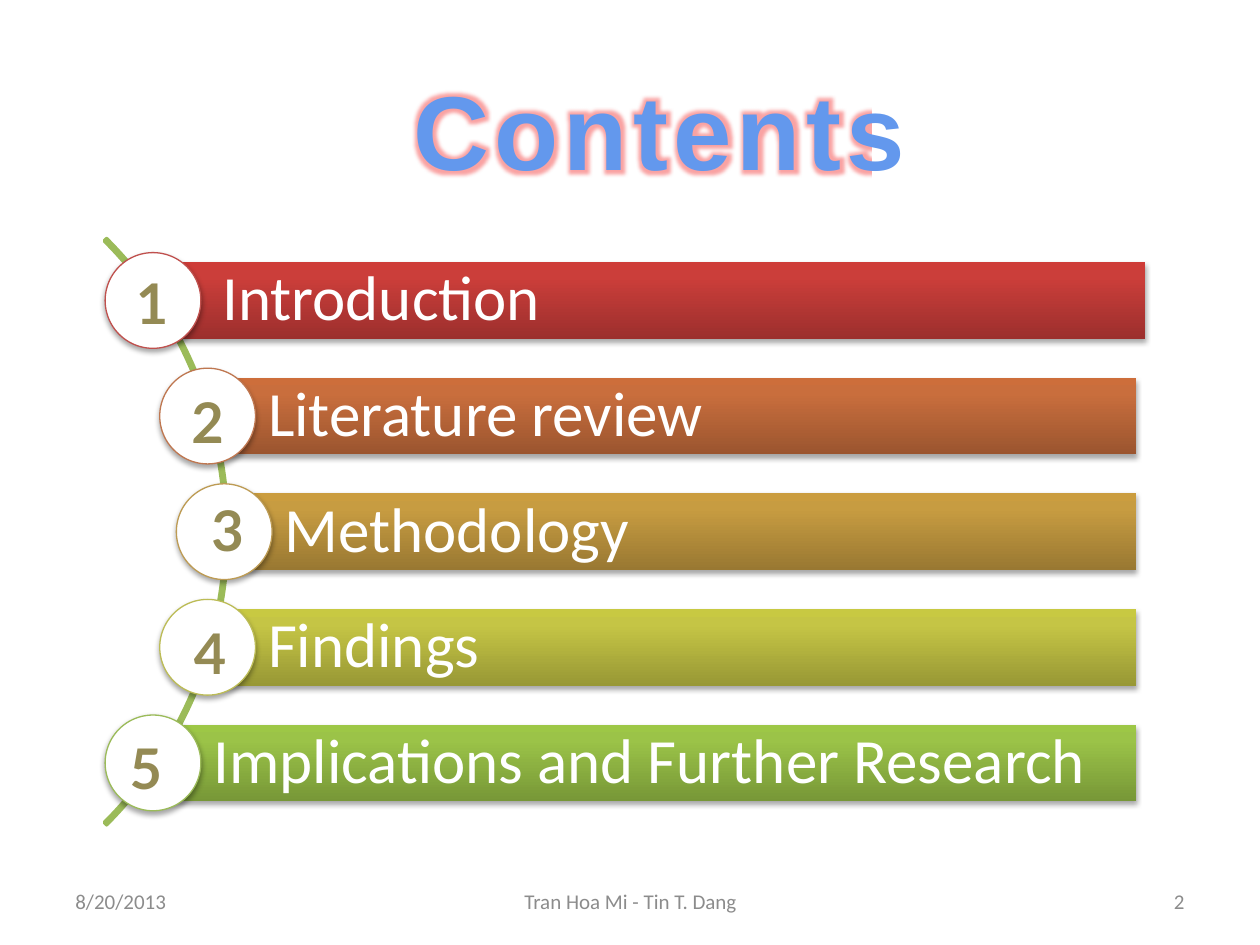
import math

import pptx
import pptx.dml.color
import pptx.enum.shapes
import pptx.enum.text
import pptx.oxml
import pptx.util
from pptx.enum.text import MSO_ANCHOR, PP_ALIGN

NAMESPACE = 'xmlns:a="http://schemas.openxmlformats.org/drawingml/2006/main"'
SHAPES = pptx.enum.shapes.MSO_SHAPE

ROW_PITCH = 0.9175
BAR_TOP, BAR_HEIGHT, BAR_RIGHT = 2.08, 0.61, 9.02
CIRCLE_SIZE = 0.76
ARC_X, ARC_Y, ARC_SIZE = -1.48, 4.22, 6.58
CIRCLE_ORBIT = 3.26

# label, bar gradient (bottom to top), circle line, bar shift, number position
TOPICS = [
    ("Introduction", ("9C2F2D", "CB3E3A", "CE3B37"), "C0504D", 0.07, (0.98, 2.08)),
    ("Literature review", ("9B552F", "C96E3D", "CD6E3B"), "BF7750", 0, (1.42, 3.03)),
    ("Methodology", ("997832", "C79C41", "CB9D3F"), "BD9B53", 0, (1.58, 3.88)),
    ("Findings", ("989835", "C5C545", "C8C942"), "BCBC56", 0, (1.44, 4.86)),
    ("Implications and Further Research", ("779737", "9BC348", "9DC746"),
     "9BBB59", 0, (0.93, 5.77)),
]


def rgb(value):
    return pptx.dml.color.RGBColor.from_string(value)


def inches(*lengths):
    return [pptx.util.Inches(length) for length in lengths]


def xml(markup):
    """Parse one DrawingML element, given without its namespace declaration."""
    tag, rest = markup.split(">", 1)
    if tag.endswith("/"):
        return pptx.oxml.parse_xml(f"{tag[:-1]} {NAMESPACE}/>{rest}")
    return pptx.oxml.parse_xml(f"{tag} {NAMESPACE}>{rest}")


def gradient(stops, angle):
    marks = "".join(f'<a:gs pos="{share * 1000}"><a:srgbClr val="{color}"/></a:gs>'
                    for share, color in stops)
    return xml(f'<a:gradFill><a:gsLst>{marks}</a:gsLst>'
               f'<a:lin ang="{angle * 60000}" scaled="0"/></a:gradFill>')


def add_shadow(shape):
    shape.shadow.inherit = False
    effects = shape._element.spPr.find(pptx.oxml.ns.qn("a:effectLst"))
    effects.append(xml(
        '<a:outerShdw blurRad="40000" dist="23000" dir="5400000" rotWithShape="0">'
        '<a:srgbClr val="000000"><a:alpha val="35000"/></a:srgbClr></a:outerShdw>'))


def set_text(box, text, size, font, color, bold=False, align=PP_ALIGN.LEFT,
             anchor=MSO_ANCHOR.TOP):
    frame = box.text_frame
    frame.text = text
    frame.word_wrap = True
    frame.vertical_anchor = anchor
    para = frame.paragraphs[0]
    para.alignment = align
    span = para.runs[0]
    span.font.size = pptx.util.Pt(size)
    span.font.name = font
    span.font.bold = bold
    span.font.color.rgb = rgb(color)
    return para


def add_text(page, place, text, *style, **options):
    box = page.shapes.add_textbox(*inches(*place))
    set_text(box, text, *style, **options)


def add_title(page):
    title = page.shapes.title
    title.left, title.top, title.width, title.height = inches(2.61, 0.47, 5.25, 1.11)
    para = set_text(title, "Contents", 60, "Arial", "6398ED", bold=True,
                    align=PP_ALIGN.CENTER)
    props = para.runs[0]._r.get_or_add_rPr()
    props.set("spc", "300")
    props.remove(props.find(pptx.oxml.ns.qn("a:solidFill")))
    outline = xml('<a:ln w="11430"><a:solidFill><a:srgbClr val="F4F6F9"/>'
                  '</a:solidFill></a:ln>')
    glow = xml('<a:effectLst><a:glow rad="101600"><a:srgbClr val="F54646">'
               '<a:alpha val="50000"/></a:srgbClr></a:glow></a:effectLst>')
    fill = gradient([(10, "6398ED"), (75, "265EA0")], 90)
    for position, part in enumerate((outline, fill, glow)):
        props.insert(position, part)


def add_arc(page):
    arc = page.shapes.add_shape(SHAPES.BLOCK_ARC, *inches(
        ARC_X - ARC_SIZE / 2, ARC_Y - ARC_SIZE / 2, ARC_SIZE, ARC_SIZE))
    for position, value in enumerate((189, 27, 0.004)):
        arc.adjustments[position] = value
    arc.fill.background()
    arc.line.color.rgb = rgb("9BBB59")
    arc.line.width = pptx.util.Pt(2)
    arc.shadow.inherit = False


def add_bar(page, left, top, width, label, colors):
    bar = page.shapes.add_shape(SHAPES.RECTANGLE, *inches(left, top, width, BAR_HEIGHT))
    bar.fill.background()
    bar.line.fill.background()
    props = bar._element.spPr
    props.replace(props.find(pptx.oxml.ns.qn("a:noFill")),
                  gradient(zip((0, 80, 100), colors), 270))
    add_shadow(bar)
    para = set_text(bar, label, 36, "Calibri", "FFFFFF", anchor=MSO_ANCHOR.MIDDLE)
    para.line_spacing = 0.9
    frame = bar.text_frame
    frame.margin_left = pptx.util.Inches(0.48)
    frame.margin_top = frame.margin_right = frame.margin_bottom = pptx.util.Inches(0.1)


def add_circle(page, center_x, center_y, color):
    circle = page.shapes.add_shape(SHAPES.OVAL, *inches(
        center_x - CIRCLE_SIZE / 2, center_y - CIRCLE_SIZE / 2, CIRCLE_SIZE, CIRCLE_SIZE))
    circle.fill.solid()
    circle.fill.fore_color.rgb = rgb("FFFFFF")
    circle.line.color.rgb = rgb(color)
    circle.line.width = pptx.util.Pt(0.75)
    add_shadow(circle)


def add_topics(page):
    for row, (label, colors, line, shift, _) in enumerate(TOPICS):
        top = BAR_TOP + row * ROW_PITCH
        center_y = top + BAR_HEIGHT / 2
        center_x = ARC_X + math.sqrt(CIRCLE_ORBIT ** 2 - (center_y - ARC_Y) ** 2)
        add_bar(page, center_x + shift, top, BAR_RIGHT - center_x, label, colors)
        add_circle(page, center_x, center_y, line)
    for number, topic in enumerate(TOPICS, 1):
        add_text(page, (*topic[-1], 0.67, 0.64), str(number), 32, "Lato", "948A54",
                 bold=True)


def add_footer(page):
    for left, width, text, align in (
            (0.5, 2.33, "8/20/2013", PP_ALIGN.LEFT),
            (7.17, 2.33, "2", PP_ALIGN.RIGHT),
            (3.42, 3.17, "Tran Hoa Mi - Tin T. Dang", PP_ALIGN.CENTER)):
        add_text(page, (left, 6.95, width, 0.4), text, 12, "Calibri", "8C8C8C",
                 align=align, anchor=MSO_ANCHOR.MIDDLE)


def main():
    deck = pptx.Presentation()
    deck.slide_width, deck.slide_height = inches(10, 7.5)
    page = deck.slides.add_slide(deck.slide_layouts[5])
    add_arc(page)
    add_topics(page)
    add_title(page)
    add_footer(page)
    deck.save("out.pptx")


if __name__ == "__main__":
    main()
